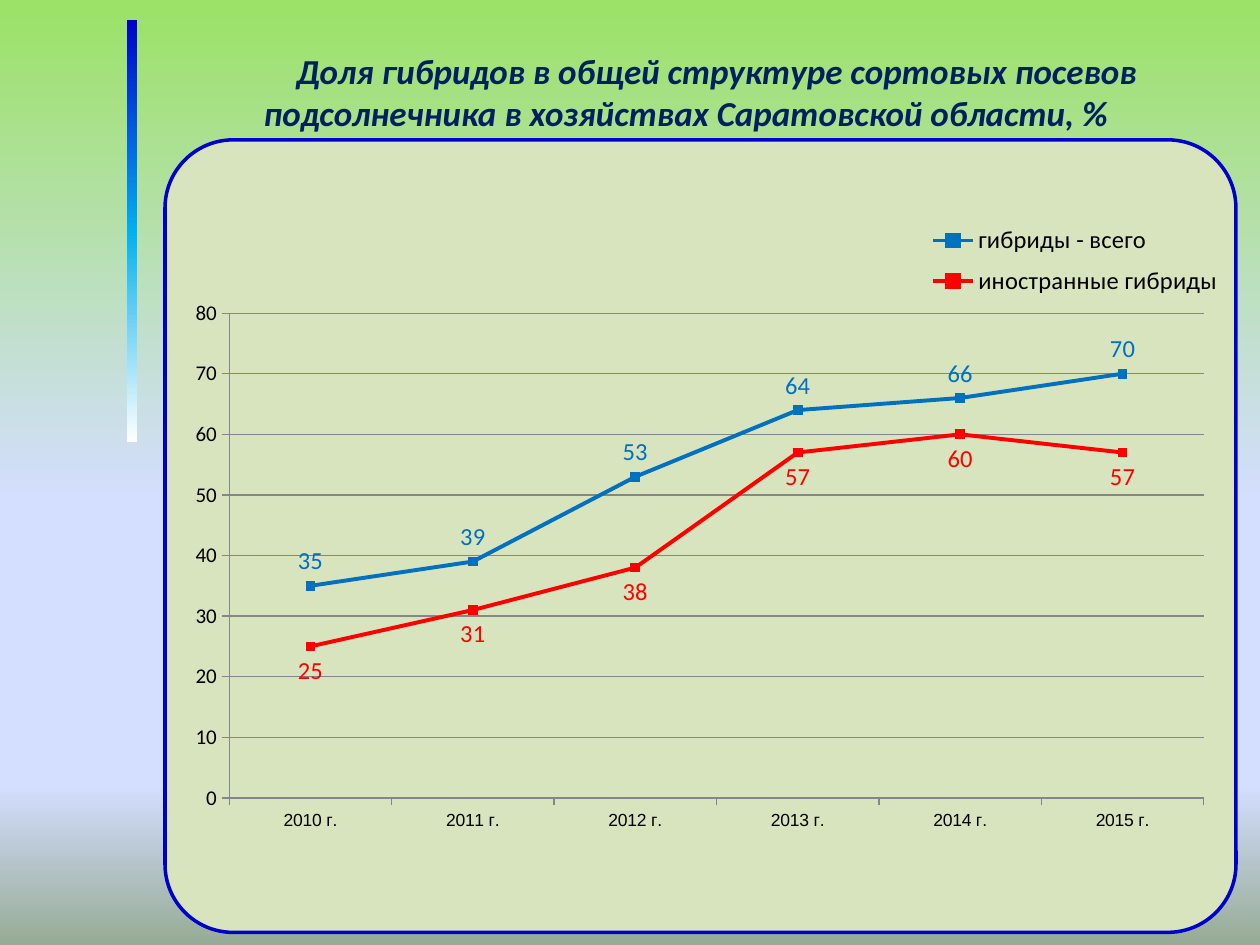
from lxml import etree
from pptx import Presentation
from pptx.chart.data import CategoryChartData
from pptx.dml.color import RGBColor
from pptx.enum.chart import (XL_CHART_TYPE, XL_LABEL_POSITION as LabelPos,
                             XL_LEGEND_POSITION, XL_MARKER_STYLE, XL_TICK_MARK)
from pptx.enum.shapes import MSO_SHAPE as Shape
from pptx.enum.text import MSO_ANCHOR, PP_ALIGN
from pptx.oxml import parse_xml
from pptx.oxml.ns import nsdecls, qn
from pptx.util import Inches, Pt

COLORS = {
    "navy": "002060", "frame": "0000CC", "panel": "D7E4BD", "grid": "868686",
    "black": "000000", "total": "0070C0", "foreign": "FF0000", "sky": "00B0F0",
    "white": "FFFFFF", "lime": "9BE266", "lilac": "D4DEFF", "moss": "96AB94",
}
YEARS = [f"{year} г." for year in range(2010, 2016)]
SHARES = [
    ("гибриды - всего", (35, 39, 53, 64, 66, 70), "total", LabelPos.ABOVE),
    ("иностранные гибриды", (25, 31, 38, 57, 60, 57), "foreign", LabelPos.BELOW),
]


def rgb(name):
    return RGBColor.from_string(COLORS[name])


def style_font(font, size, color="black", name="Calibri", bold=False, italic=False):
    font.size, font.name = Pt(size), name
    font.bold, font.italic = bold, italic
    font.color.rgb = rgb(color)


def write_text(frame, text, align=PP_ALIGN.CENTER, indent=0, **font_format):
    frame.word_wrap = True
    frame.vertical_anchor = MSO_ANCHOR.MIDDLE
    paragraph = frame.paragraphs[0]
    paragraph.alignment = align
    properties = paragraph._p.get_or_add_pPr()
    properties.set("marL", "0")
    properties.set("indent", str(Inches(indent)))
    run = paragraph.add_run()
    run.text = text
    style_font(run.font, **font_format)


def fill_gradient(fill, owner, stops):
    fill.gradient()
    fill.gradient_angle = 270
    stop_list = owner.xpath(".//a:gsLst")[0]
    for old_stop in list(stop_list):
        stop_list.remove(old_stop)
    for position, color in stops:
        stop = etree.SubElement(stop_list, qn("a:gs"), pos=str(position * 1000))
        etree.SubElement(stop, qn("a:srgbClr"), val=COLORS[color])


def manual_layout(x, y, width, height, target=""):
    inner = f'<c:layoutTarget val="{target}"/>' if target else ""
    values = zip("xywh", (x, y, width, height))
    sizes = "".join(f'<c:{key} val="{value}"/>' for key, value in values)
    return parse_xml(
        f'<c:layout {nsdecls("c")}><c:manualLayout>{inner}'
        f'<c:xMode val="edge"/><c:yMode val="edge"/>{sizes}'
        '</c:manualLayout></c:layout>')


def place_layout(parent, layout, before):
    for old_layout in parent.findall(qn("c:layout")):
        parent.remove(old_layout)
    parent.find(qn(before)).addprevious(layout)


class SlideBuilder:
    def __init__(self, slide):
        self.slide = slide

    def background(self, stops):
        fill_gradient(self.slide.background.fill, self.slide.element, stops)

    def title(self, text, left, top, width, height, **text_format):
        title = self.slide.shapes.title
        title.left, title.top = Inches(left), Inches(top)
        title.width, title.height = Inches(width), Inches(height)
        write_text(title.text_frame, text, **text_format)

    def shape(self, kind, *box):
        shape = self.slide.shapes.add_shape(kind, *map(Inches, box))
        shape.shadow.inherit = False
        return shape

    def bar(self, *box, stops):
        bar = self.shape(Shape.RECTANGLE, *box)
        fill_gradient(bar.fill, bar._element, stops)
        bar.line.fill.background()

    def panel(self, *box):
        panel = self.shape(Shape.ROUNDED_RECTANGLE, *box)
        panel.adjustments[0] = 0.086
        panel.fill.solid()
        panel.fill.fore_color.rgb = rgb("panel")
        panel.line.color.rgb = rgb("frame")
        panel.line.width = Pt(2)

    def line_chart(self, *box):
        data = CategoryChartData(number_format="0")
        data.categories = YEARS
        for name, values, _, _ in SHARES:
            data.add_series(name, values)
        chart = self.slide.shapes.add_chart(
            XL_CHART_TYPE.LINE_MARKERS, *map(Inches, box), data).chart
        style_font(chart.font, 18)
        chart.has_title = False
        chart.plots[0].vary_by_categories = False
        place_layout(chart._chartSpace.chart.plotArea,
                     manual_layout(0.06, 0.18, 0.91, 0.74, "inner"), "c:lineChart")
        self.axes(chart)
        self.legend(chart)
        for series, (_, _, color, position) in zip(chart.plots[0].series, SHARES):
            self.series(series, color, position)

    def axes(self, chart):
        years, percent = chart.category_axis, chart.value_axis
        for axis, size, font in ((years, 10, "Arial"), (percent, 12, "Calibri")):
            axis.major_tick_mark = XL_TICK_MARK.OUTSIDE
            axis.format.line.color.rgb = rgb("grid")
            style_font(axis.tick_labels.font, size, name=font)
        percent.minimum_scale, percent.maximum_scale = 0, 80
        percent.major_unit = 10
        percent.has_major_gridlines = True
        percent.major_gridlines.format.line.color.rgb = rgb("grid")

    def legend(self, chart):
        chart.has_legend = True
        legend = chart.legend
        legend.position = XL_LEGEND_POSITION.RIGHT
        legend.include_in_layout = True
        style_font(legend.font, 14)
        place_layout(legend._element, manual_layout(0.71, 0.03, 0.28, 0.14), "c:overlay")

    def series(self, series, color, position):
        series.smooth = False
        series.format.line.color.rgb = rgb(color)
        series.format.line.width = Pt(2.25)
        marker = series.marker
        marker.style, marker.size = XL_MARKER_STYLE.SQUARE, 5
        marker.format.fill.solid()
        marker.format.fill.fore_color.rgb = rgb(color)
        marker.format.line.color.rgb = rgb(color)
        labels = series.data_labels
        labels.show_value = True
        labels.position = position
        style_font(labels.font, 14, color)


def main():
    deck = Presentation()
    deck.slide_width, deck.slide_height = Inches(10), Inches(7.5)
    builder = SlideBuilder(deck.slides.add_slide(deck.slide_layouts[5]))
    builder.background([(0, "lime"), (53, "lilac"), (83, "lilac"), (100, "moss")])
    builder.bar(1.01, 0.16, 0.08, 3.35,
                stops=[(0, "frame"), (50, "sky"), (100, "white")])
    builder.panel(1.31, 1.11, 8.5, 6.29)
    builder.title(
        "Доля гибридов в общей структуре сортовых посевов "
        "подсолнечника в хозяйствах Саратовской области, %",
        1.09, 0.34, 8.71, 0.77, indent=0.49,
        size=20, color="navy", bold=True, italic=True)
    builder.line_chart(1.31, 1.55, 8.5, 5.2)
    deck.save("out.pptx")


if __name__ == "__main__":
    main()
